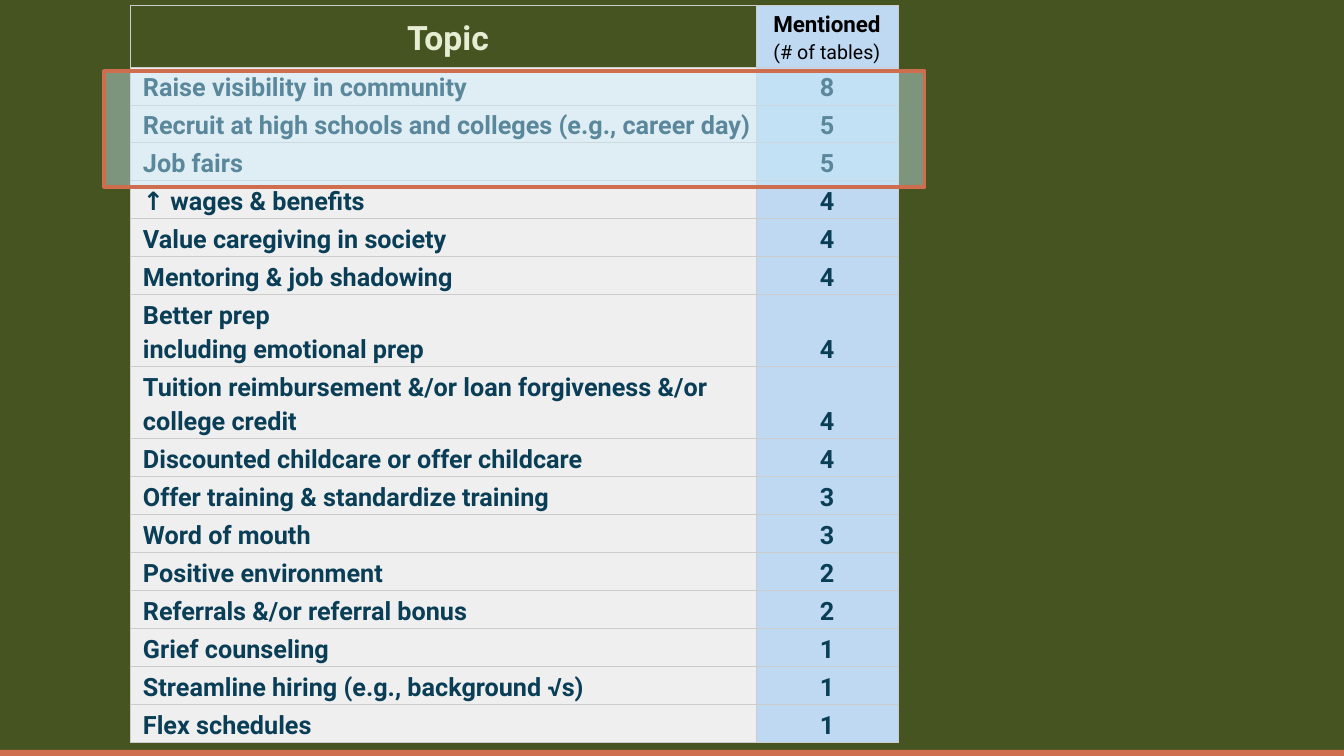
"""Build the slide that ranks topics by number of mentions."""
from dataclasses import dataclass

from lxml import etree
from pptx import Presentation
from pptx import util as u
from pptx.dml.color import RGBColor
from pptx.enum import shapes, text
from pptx.oxml.ns import qn


@dataclass(frozen=True)
class Theme:
    """Colours and type sizes of the slide."""
    font: str = "Roboto"
    moss: str = "465422"
    rust: str = "CF6D4F"
    sky: str = "BFD9F2"
    glow: str = "CAEEFB"
    pale: str = "EFEFEF"
    rule: str = "CCCCCC"
    cream: str = "E6EDD3"
    navy: str = "0A3E56"
    black: str = "000000"
    title: int = 24
    body: int = 18
    head: int = 16
    note: int = 14


LOOK = Theme()
SCALE = 914400 / 100.8
LEFT, MID = text.PP_ALIGN.LEFT, text.PP_ALIGN.CENTER
MIDDLE, BOTTOM = text.MSO_ANCHOR.MIDDLE, text.MSO_ANCHOR.BOTTOM
TOPICS = [
    ("Raise visibility in community", 8),
    ("Recruit at high schools and colleges (e.g., career day)", 5),
    ("Job fairs", 5),
    ("↑ wages & benefits", 4),
    ("Value caregiving in society", 4),
    ("Mentoring & job shadowing", 4),
    ("Better prep\nincluding emotional prep", 4),
    ("Tuition reimbursement &/or loan forgiveness &/or college credit", 4),
    ("Discounted childcare or offer childcare", 4),
    ("Offer training & standardize training", 3),
    ("Word of mouth", 3),
    ("Positive environment", 2),
    ("Referrals &/or referral bonus", 2),
    ("Grief counseling", 1),
    ("Streamline hiring (e.g., background √s)", 1),
    ("Flex schedules", 1),
]


def px(n):
    """Turn pixels into EMU."""
    return u.Emu(round(n * SCALE))


def rgb(code):
    """Turn a hex code into a colour."""
    return RGBColor.from_string(code)


def write(para, words, size=LOOK.body, color=LOOK.navy, bold=True, align=LEFT):
    """Put one formatted run into a paragraph."""
    para.alignment, para.line_spacing = align, 1.15
    run = para.add_run()
    run.text = words
    font = run.font
    font.name, font.size, font.bold = LOOK.font, u.Pt(size), bold
    font.color.rgb = rgb(color)


def edge(cell):
    """Draw a thin rule on all four sides of a cell."""
    props = cell._tc.get_or_add_tcPr()
    for i, side in enumerate(("a:lnL", "a:lnR", "a:lnT", "a:lnB")):
        line = etree.Element(qn(side), w=str(u.Pt(0.75)))
        fill = etree.SubElement(line, qn("a:solidFill"))
        etree.SubElement(fill, qn("a:srgbClr"), val=LOOK.rule)
        props.insert(i, line)


def fill_cell(cell, lines, fill, anchor=MIDDLE, inset=3):
    """Fill a cell with lines, each a pair of words and format."""
    cell.fill.solid()
    cell.fill.fore_color.rgb = rgb(fill)
    edge(cell)
    cell.vertical_anchor = anchor
    cell.margin_left, cell.margin_right = px(inset), px(3)
    cell.margin_top = cell.margin_bottom = px(2)
    frame = cell.text_frame
    for i, (words, form) in enumerate(lines):
        para = frame.add_paragraph() if i else frame.paragraphs[0]
        write(para, words, **form)


def add_grid(slide):
    """Add the table of topics and counts."""
    tall = [62] + [71 if "\n" in t or len(t) > 60 else 38 for t, _ in TOPICS]
    frame = slide.shapes.add_table(
        len(tall), 2, px(130), px(5), px(768), px(sum(tall)))
    grid = frame.table
    grid.first_row = grid.horz_banding = False
    for col, wide in zip(grid.columns, (626, 142)):
        col.width = px(wide)
    for row, high in zip(grid.rows, tall):
        row.height = px(high)
    title = dict(size=LOOK.title, color=LOOK.cream, align=MID)
    head = dict(size=LOOK.head, color=LOOK.black, align=MID)
    note = dict(head, size=LOOK.note, bold=False)
    fill_cell(grid.cell(0, 0), [("Topic", title)], LOOK.moss, inset=13)
    fill_cell(grid.cell(0, 1),
              [("Mentioned", head), ("(# of tables)", note)], LOOK.sky)
    for i, (topic, count) in enumerate(TOPICS, 1):
        lines = [(part, {}) for part in topic.split("\n")]
        fill_cell(grid.cell(i, 0), lines, LOOK.pale, inset=13)
        fill_cell(grid.cell(i, 1), [(str(count), dict(align=MID))],
                  LOOK.sky, anchor=BOTTOM)


def add_box(slide, x, y, w, h, fill, line=None, alpha=None):
    """Add a rectangle, with an outline and opacity if given."""
    box = slide.shapes.add_shape(
        shapes.MSO_SHAPE.RECTANGLE, px(x), px(y), px(w), px(h))
    box.shadow.inherit = False
    box.fill.solid()
    box.fill.fore_color.rgb = rgb(fill)
    if alpha:
        tint = box._element.spPr.find(qn("a:solidFill"))[0]
        etree.SubElement(tint, qn("a:alpha"), val=str(alpha * 1000))
    if line:
        box.line.color.rgb = rgb(line)
        box.line.width = u.Pt(2.25)
    else:
        box.line.fill.background()


def main():
    """Build and save the slide."""
    deck = Presentation()
    deck.slide_width, deck.slide_height = px(1344), px(756)
    slide = deck.slides.add_slide(deck.slide_layouts[6])
    back = slide.background.fill
    back.solid()
    back.fore_color.rgb = rgb(LOOK.moss)
    add_box(slide, 0, 750, 1344, 30, LOOK.rust)
    add_grid(slide)
    add_box(slide, 104, 71, 821, 116, LOOK.glow, line=LOOK.rust, alpha=42)
    deck.save("out.pptx")


if __name__ == "__main__":
    main()
